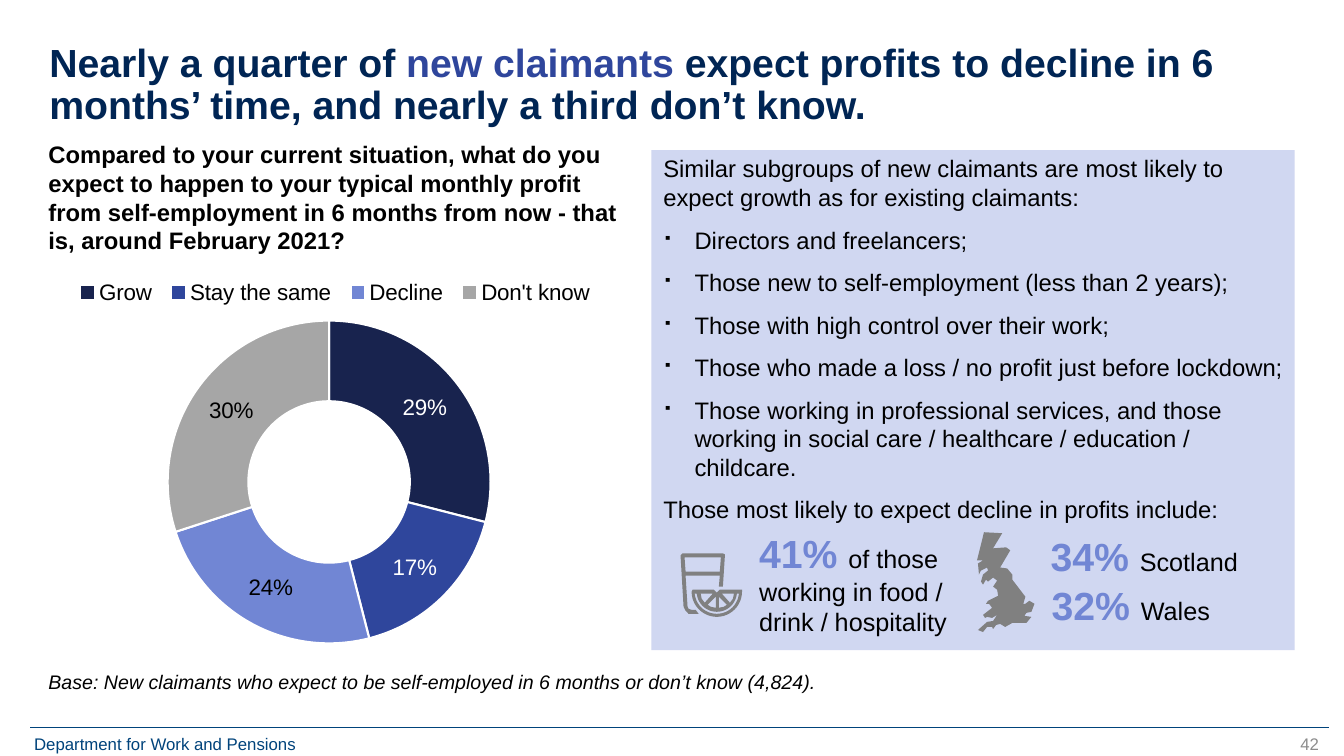
from dataclasses import dataclass
from math import cos, pi, sin

from lxml.etree import SubElement
from pptx import Presentation
from pptx.chart.data import CategoryChartData as Data
from pptx.dml.color import RGBColor as RGB
from pptx.enum.chart import XL_CHART_TYPE as Kind, XL_LEGEND_POSITION as Spot
from pptx.enum.shapes import MSO_CONNECTOR as Link, MSO_SHAPE as Form
from pptx.enum.text import PP_ALIGN as Align
from pptx.oxml.ns import qn
from pptx.util import Inches, Pt

INK = {
    "black": "000000", "white": "FFFFFF", "navy": "002554", "royal": "2F469C",
    "deep": "18234E", "sky": "7186D4", "grey": "A6A6A6", "icon": "808080",
    "panel": "D0D7F1", "foot": "00437B", "page": "8C8C8C",
}
FONT = "Arial"
Dot = tuple[float, float]
Box = tuple[float, float, float, float]


@dataclass
class Run:
    text: str
    ink: str = "black"
    size: float = 0
    bold: bool | None = None


@dataclass
class Para:
    runs: list[Run]
    bullet: bool = False


@dataclass
class Label:
    box: Box
    paras: list[Para]
    size: float
    ink: str = "black"
    bold: bool = False
    slant: bool = False
    align: Align = Align.LEFT
    inset: bool = False
    gap: float = 0
    lead: float = 1


@dataclass
class Slice:
    name: str
    share: float
    ink: str
    text: str


def tint(name: str) -> RGB:
    return RGB.from_string(INK[name])


def place(box: Box) -> list[Inches]:
    return [Inches(v) for v in box]


def plain(text: str) -> list[Para]:
    return [Para([Run(text)])]


def stat(left: float, top: float, wide: float, high: float, share: str, text: str) -> Label:
    runs = [Run(share + " ", "sky", 28, True), Run(text, "black", 18, False)]
    return Label((left, top, wide, high), [Para(runs)], 18, gap=4)


def draw_label(slide, label: Label) -> None:
    frame = slide.shapes.add_textbox(*place(label.box)).text_frame
    frame.word_wrap = True
    if not label.inset:
        frame.margin_left = frame.margin_right = 0
        frame.margin_top = frame.margin_bottom = 0
    for i, item in enumerate(label.paras):
        para = frame.add_paragraph() if i else frame.paragraphs[0]
        para.alignment = label.align
        para.line_spacing = label.lead
        para.space_before = para.space_after = Pt(label.gap)
        para.font.name, para.font.size = FONT, Pt(label.size)
        para.font.bold, para.font.italic = label.bold, label.slant
        para.font.color.rgb = tint(label.ink)
        if item.bullet:
            props = para._p.get_or_add_pPr()
            props.set("marL", str(Inches(0.31)))
            props.set("indent", str(-Inches(0.31)))
            SubElement(props, qn("a:buSzPct")).set("val", "50000")
            SubElement(props, qn("a:buChar")).set("char", "▪")
            props.append(props.find(qn("a:defRPr")))
        for part in item.runs:
            run = para.add_run()
            run.text = part.text
            if len(item.runs) > 1:
                run.font.color.rgb = tint(part.ink)
                run.font.bold = part.bold
                if part.size:
                    run.font.size = Pt(part.size)


def fill(shape, ink: str) -> None:
    shape.shadow.inherit = False
    shape.fill.solid()
    shape.fill.fore_color.rgb = tint(ink)
    shape.line.fill.background()


def draw_icon(slide, loops: list[list[Dot]]) -> None:
    pen = None
    for loop in loops:
        dots = [(Inches(x), Inches(y)) for x, y in loop]
        if pen is None:
            pen = slide.shapes.build_freeform(*dots[0])
        else:
            pen.move_to(*dots[0])
        pen.add_line_segments(dots[1:], close=True)
    fill(pen.convert_to_shape(), "icon")


def arc(size: float, drop: float) -> list[Dot]:
    turns = [pi * i / 24 for i in range(25)]
    return [(7.11 + size * cos(t), max(5.87 + size * sin(t), drop)) for t in turns]


def flip(loop: list[Dot]) -> list[Dot]:
    return [(14.23 - x, y) for x, y in loop]


def pin(node, index: int, box: Box, inner: bool = False) -> None:
    for old in node.findall(qn("c:layout")):
        node.remove(old)
    lay = SubElement(node, qn("c:layout"))
    node.insert(index, lay)
    hand = SubElement(lay, qn("c:manualLayout"))
    rules = {"layoutTarget": "inner"} if inner else {}
    rules |= {"xMode": "edge", "yMode": "edge"}
    rules |= {key: str(val) for key, val in zip("xywh", box)}
    for key, val in rules.items():
        SubElement(hand, qn("c:" + key)).set("val", val)


def style(font, ink: str) -> None:
    font.name, font.size = FONT, Pt(16)
    font.color.rgb = tint(ink)


def draw_chart(slide, parts: list[Slice]) -> None:
    data = Data(number_format="0%")
    data.categories = [p.name for p in parts]
    data.add_series("Series 1", [p.share for p in parts])
    chart = slide.shapes.add_chart(Kind.DOUGHNUT, *place((0, 2.63, 6.16, 4.18)), data).chart
    chart.has_title = False
    style(chart.font, "black")
    chart.has_legend = True
    chart.legend.position = Spot.TOP
    chart.legend.include_in_layout = False
    style(chart.legend.font, "black")
    pin(chart.legend._element, 1, (0.11, 0.02, 0.86, 0.09))
    pin(chart._chartSpace.chart.plotArea, 0, (0.27, 0.13, 0.52, 0.77), True)
    plot = chart.plots[0]
    plot.vary_by_categories = True
    plot._element.find(qn("c:holeSize")).set("val", "59")
    row = plot.series[0]
    tags = row.data_labels
    tags.show_value, tags.show_percentage = True, False
    tags.number_format, tags.number_format_is_linked = "0%", False
    style(tags.font, "black")
    for i, part in enumerate(parts):
        point = row.points[i]
        point.format.fill.solid()
        point.format.fill.fore_color.rgb = tint(part.ink)
        point.format.line.color.rgb = tint("white")
        point.format.line.width = Pt(1.5)
        if part.text != "black":
            style(point.data_label.font, part.text)


PARTS = [
    Slice("Grow", 0.29, "deep", "white"),
    Slice("Stay the same", 0.17, "royal", "white"),
    Slice("Decline", 0.24, "sky", "black"),
    Slice("Don't know", 0.3, "grey", "black"),
]
GROUPS = [
    "Directors and freelancers;",
    "Those new to self-employment (less than 2 years);",
    "Those with high control over their work;",
    "Those who made a loss / no profit just before lockdown;",
    "Those working in professional services, and those working in social care / healthcare / education / childcare.",
]
TITLE = [Para([
    Run("Nearly a quarter of ", "navy"),
    Run("new claimants ", "royal"),
    Run("expect profits to decline in 6 months’ time, and nearly a third don’t know.", "navy"),
])]
POINTS = (
    plain("Similar subgroups of new claimants are most likely to expect growth as for existing claimants:")
    + [Para([Run(g)], True) for g in GROUPS]
    + plain("Those most likely to expect decline in profits include:")
)
ASK = ("Compared to your current situation, what do you expect to happen to your typical monthly profit "
       "from self-employment in 6 months from now - that is, around February 2021?")
BASE = "Base: New claimants who expect to be self-employed in 6 months or don’t know (4,824)."
LABELS = [
    Label((0.24, 7.23, 3.23, 0.3), plain("Department for Work and Pensions"), 12, "foot", inset=True),
    Label((10.18, 7.23, 3, 0.4), plain("42"), 12, "page", align=Align.RIGHT, inset=True),
    Label((0.49, 0.43, 12.34, 0.85), TITLE, 28, "navy", bold=True, lead=0.9),
    Label((0.48, 6.65, 12.36, 0.31), plain(BASE), 14, slant=True, gap=5),
    Label((6.48, 1.48, 6.38, 3.33), POINTS, 17, inset=True, gap=5),
    Label((0.48, 1.39, 5.82, 0.48), plain(ASK), 17, bold=True, gap=5),
    stat(7.53, 5.25, 1.9, 1.08, "41%", "of those working in food / drink / hospitality"),
    stat(10.43, 5.77, 2.28, 0.47, "32%", "Wales"),
    stat(10.42, 5.28, 2.04, 0.47, "34%", "Scotland"),
]
SIDE = [(7.07, 5.89), (6.99, 5.98), (6.96, 5.94), (6.95, 5.89)]
BASIN = [(7.1, 5.92), (7.1, 6.03), (7.05, 6.02), (7.02, 6)]
FRUIT = [
    arc(0.25, 5.87) + [(6.87, 5.85), (7.08, 5.85), (7.11, 5.88), (7.14, 5.85), (7.36, 5.85)],
    arc(0.22, 5.89) + arc(0.2, 5.89)[::-1],
    SIDE, BASIN, flip(SIDE), flip(BASIN),
]
GLASS = [
    [(7.19, 5.5), (7.17, 5.49), (6.77, 5.49), (6.75, 5.51), (6.78, 6.02), (6.8, 6.06), (6.83, 6.09),
     (6.93, 6.09), (6.9, 6.05), (6.86, 6.05), (6.83, 6.04), (6.82, 6.02), (6.8, 5.71), (7.14, 5.71),
     (7.13, 5.82), (7.17, 5.82), (7.19, 5.51)],
    [(7.14, 5.67), (6.8, 5.67), (6.79, 5.53), (7.15, 5.53)],
]
BRITAIN = [[
    (10.23, 6.07), (10.26, 5.99), (10.21, 5.96), (10.17, 5.99), (10.15, 5.99), (10.17, 5.92),
    (10.04, 5.75), (10.04, 5.7), (9.99, 5.64), (9.92, 5.63), (10.02, 5.46), (9.98, 5.43), (9.85, 5.44),
    (9.94, 5.29), (9.76, 5.28), (9.69, 5.56), (9.75, 5.56), (9.7, 5.59), (9.71, 5.7), (9.73, 5.66),
    (9.79, 5.63), (9.8, 5.66), (9.75, 5.7), (9.73, 5.77), (9.75, 5.8), (9.78, 5.75), (9.8, 5.77),
    (9.85, 5.73), (9.89, 5.76), (9.85, 5.82), (9.89, 5.85), (9.9, 5.91), (9.8, 5.96), (9.78, 5.99),
    (9.81, 5.99), (9.84, 6.03), (9.75, 6.1), (9.77, 6.13), (9.79, 6.12), (9.84, 6.13), (9.89, 6.1),
    (9.85, 6.16), (9.79, 6.17), (9.7, 6.25), (9.75, 6.27), (9.79, 6.22), (9.84, 6.22), (9.85, 6.24),
    (9.88, 6.2), (9.92, 6.19), (9.97, 6.22), (10.04, 6.18), (10.18, 6.18), (10.23, 6.12), (10.16, 6.11),
    (10.18, 6.08),
]]


def main() -> None:
    deck = Presentation()
    deck.slide_width, deck.slide_height = Inches(13.33), Inches(7.5)
    slide = deck.slides.add_slide(deck.slide_layouts[6])
    rule = slide.shapes.add_connector(Link.STRAIGHT, *place((0.3, 7.22, 13.18, 7.22)))
    rule.line.color.rgb, rule.line.width = tint("foot"), Pt(0.5)
    SubElement(rule._element.spPr, qn("a:effectLst"))
    fill(slide.shapes.add_shape(Form.RECTANGLE, *place((6.46, 1.49, 6.38, 4.96))), "panel")
    draw_chart(slide, PARTS)
    for label in LABELS:
        draw_label(slide, label)
    for icon in (FRUIT, GLASS, BRITAIN):
        draw_icon(slide, icon)
    deck.save("out.pptx")


if __name__ == "__main__":
    main()
